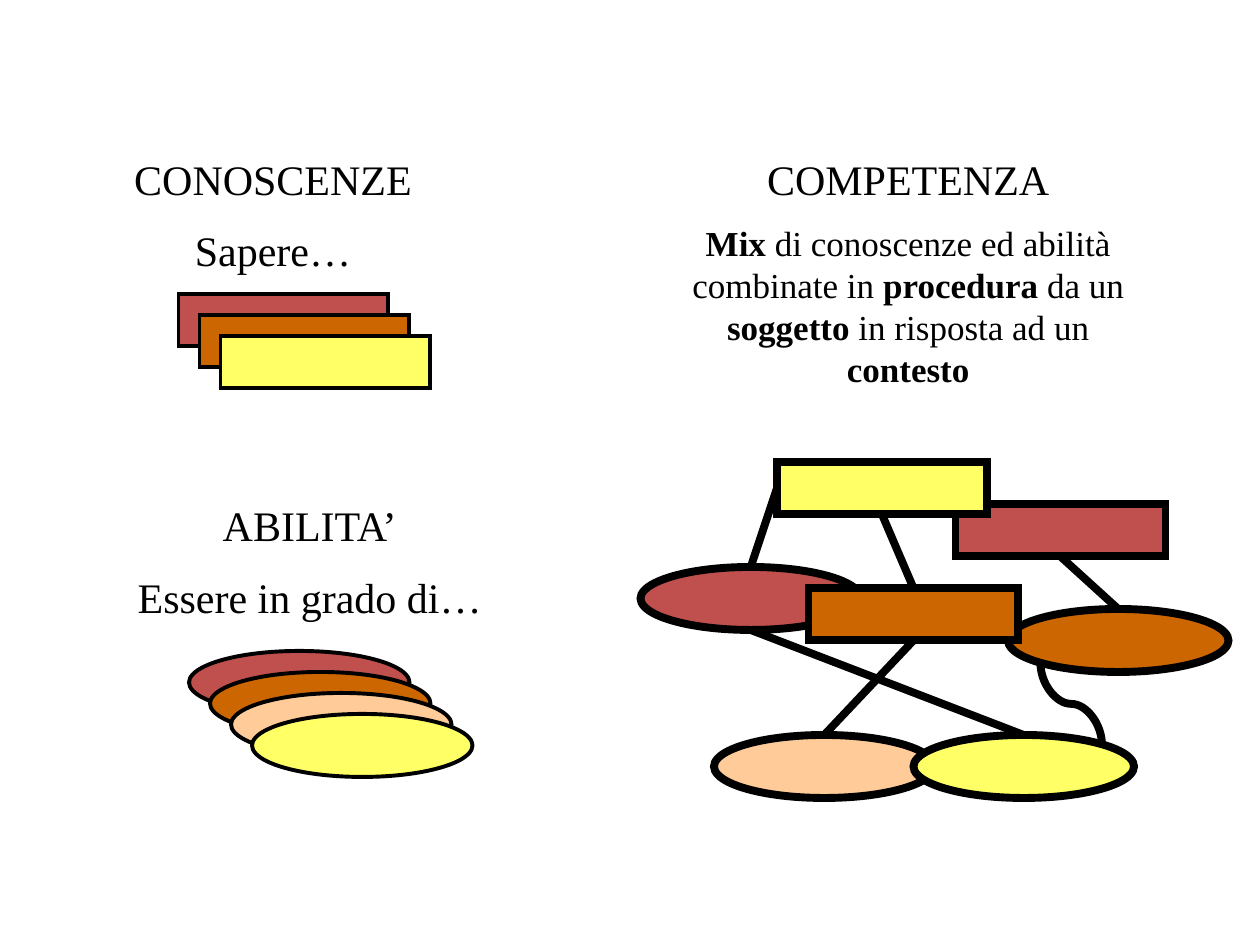
from lxml.etree import SubElement
from pptx import Presentation
from pptx.dml.color import RGBColor
from pptx.enum.shapes import MSO_CONNECTOR as Link, MSO_SHAPE as Preset
from pptx.enum.text import MSO_AUTO_SIZE as AutoSize, PP_ALIGN as Align
from pptx.oxml.ns import qn
from pptx.util import Cm, Pt

FONT = "Times New Roman"
BLACK, RED, ORANGE = "000000", "C0504D", "CC6600"
PEACH, YELLOW = "FFCC99", "FFFF66"
GRID_CM = 2.54 / 12
SIZES = {Preset.RECTANGLE: (20, 5), Preset.OVAL: (21, 6)}
TOP, LEFT, BOTTOM = 0, 1, 2


def grid(count):
    """Return the length of a number of grid units, twelve to the inch."""
    return Cm(count * GRID_CM)


def color(value):
    """Return the colour for a hex string."""
    return RGBColor.from_string(value)


def add_block(group, preset, left, top, fill, weight):
    """Add an outlined rectangle or ellipse at a grid position."""
    width, height = SIZES[preset]
    block = group.shapes.add_shape(
        preset, grid(left), grid(top), grid(width), grid(height))
    block.shadow.inherit = False
    block.fill.solid()
    block.fill.fore_color.rgb = color(fill)
    block.line.color.rgb = color(BLACK)
    block.line.width = Pt(weight)
    outline = block._element.spPr.find(qn("a:ln"))
    SubElement(outline, qn("a:miter")).set("lim", "800000")
    return block


def add_stack(page, preset, left, top, fills):
    """Add a group of equal blocks, each shifted two units down and right."""
    group = page.shapes.add_group_shape()
    for index, fill in enumerate(fills):
        add_block(group, preset, left + 2 * index, top + 2 * index, fill, 2.25)


def add_line(group, kind, begin, end):
    """Add a thick black connector without shadow."""
    line = group.shapes.add_connector(kind, *begin, *end)
    line.line.color.rgb = color(BLACK)
    line.line.width = Pt(4.5)
    SubElement(line._element.spPr, qn("a:effectLst"))
    return line


def side_point(block, side):
    """Return the middle of the top, left or bottom side of a block."""
    if side == LEFT:
        return block.left, block.top + block.height // 2
    drop = block.height if side == BOTTOM else 0
    return block.left + block.width // 2, block.top + drop


def link_blocks(group, source, side, target):
    """Draw a straight line from a side of one block to the top of another."""
    line = add_line(group, Link.STRAIGHT,
                    side_point(source, side), side_point(target, TOP))
    if source.auto_shape_type == Preset.RECTANGLE:
        line.begin_connect(source, side)
    line.end_connect(target, TOP)


def add_network(page):
    """Add the group of linked rectangles and ellipses."""
    group = page.shapes.add_group_shape()
    oval_red, oval_orange, oval_peach, oval_yellow = [
        add_block(group, Preset.OVAL, left, top, fill, 4.5)
        for left, top, fill in [(61, 54, RED), (96, 58, ORANGE),
                                (68, 70, PEACH), (87, 70, YELLOW)]]
    box_red, box_orange, box_yellow = [
        add_block(group, Preset.RECTANGLE, left, top, fill, 4.5)
        for left, top, fill in [(91, 48, RED), (77, 56, ORANGE),
                                (74, 44, YELLOW)]]
    for source, side, target in [(box_yellow, LEFT, oval_red),
                                 (box_yellow, BOTTOM, box_orange),
                                 (oval_red, BOTTOM, oval_yellow),
                                 (box_orange, BOTTOM, oval_peach),
                                 (box_red, BOTTOM, oval_orange)]:
        link_blocks(group, source, side, target)
    curve = add_line(group, Link.CURVE,
                     (Cm(22.42), Cm(13.57)), (Cm(20.77), Cm(14.81)))
    curve._element.spPr.find(qn("a:xfrm")).set("rot", "16200000")


def add_text(page, left, top, width, height, paragraphs):
    """Add centred paragraphs, each a size and a list of text and bold pairs."""
    box = page.shapes.add_textbox(
        grid(left), grid(top), grid(width), grid(height))
    frame = box.text_frame
    frame.word_wrap = True
    frame.auto_size = AutoSize.SHAPE_TO_FIT_TEXT
    for index, (size, runs) in enumerate(paragraphs):
        para = frame.add_paragraph() if index else frame.paragraphs[0]
        para.alignment = Align.CENTER
        spacing = SubElement(para._p.get_or_add_pPr(), qn("a:spcBef"))
        SubElement(spacing, qn("a:spcPct")).set("val", "50000")
        for text, bold in runs:
            span = para.add_run()
            span.text = text
            span.font.name = FONT
            span.font.size = Pt(size)
            span.font.bold = bold
            span.font.color.rgb = color(BLACK)


def main():
    """Build the slide and save it."""
    deck = Presentation()
    deck.slide_width, deck.slide_height = Cm(25.4), Cm(19.05)
    page = deck.slides.add_slide(deck.slide_layouts[6])
    add_stack(page, Preset.RECTANGLE, 17, 28, [RED, ORANGE, YELLOW])
    add_stack(page, Preset.OVAL, 18, 62, [RED, ORANGE, PEACH, YELLOW])
    add_network(page)
    add_text(page, 9, 14, 34, 13.2, [(24, [("CONOSCENZE", False)]),
                                     (24, [("Sapere…", False)])])
    add_text(page, 11, 47, 37, 13.2, [(24, [("ABILITA’", False)]),
                                      (24, [("Essere in grado di…", False)])])
    add_text(page, 63, 14, 47, 24, [
        (24, [("COMPETENZA", False)]),
        (20, [("Mix", True),
              (" di conoscenze ed abilità combinate in ", False),
              ("procedura", True), (" da un ", False),
              ("soggetto", True), (" in risposta ad un ", False),
              ("contesto", True)])])
    deck.save("out.pptx")


if __name__ == "__main__":
    main()
